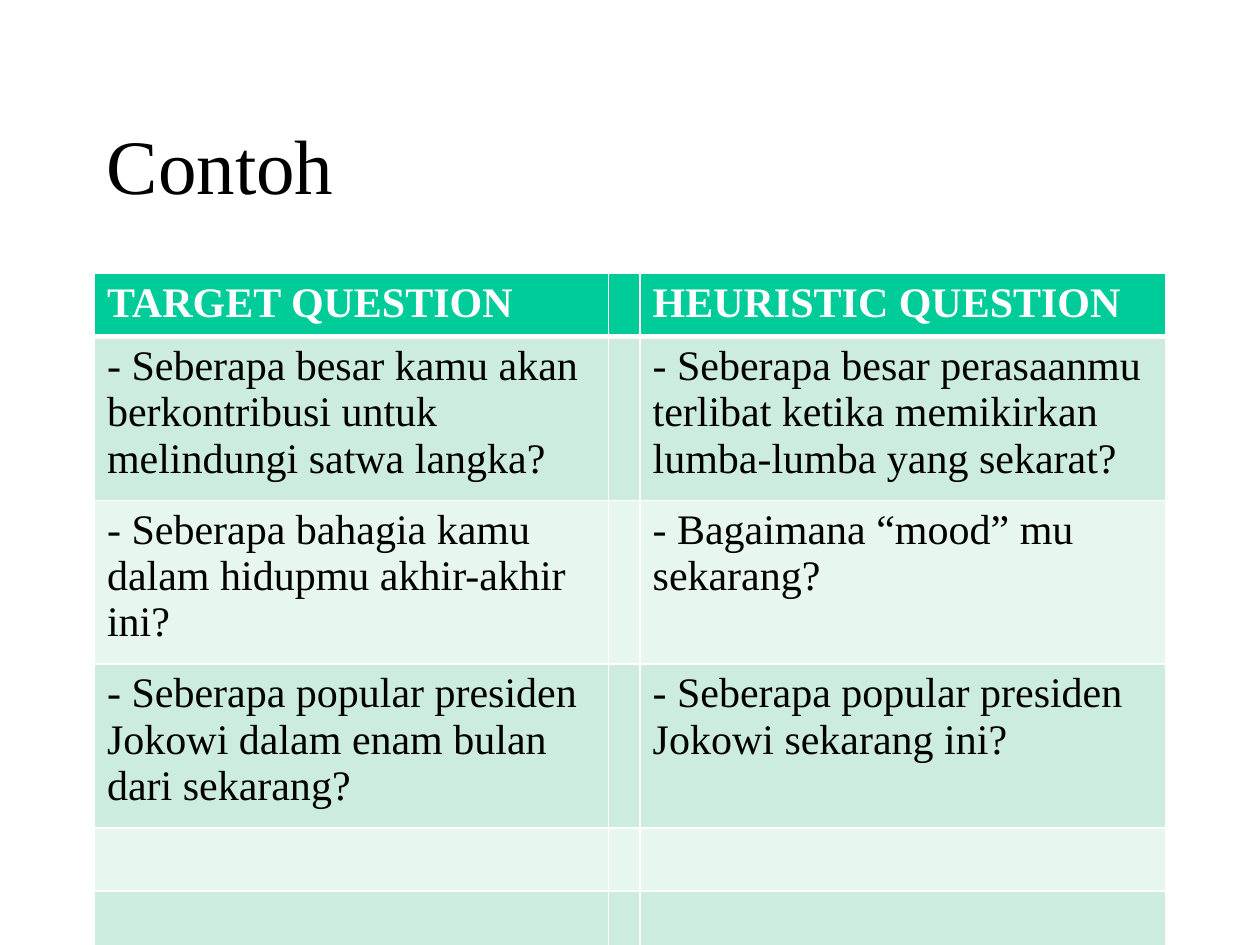
from dataclasses import dataclass

from lxml import etree
from pptx import Presentation
from pptx.dml.color import RGBColor
from pptx.enum.text import MSO_ANCHOR
from pptx.oxml.ns import qn
from pptx.util import Inches, Pt

MIDDLE = MSO_ANCHOR.MIDDLE


@dataclass(frozen=True)
class Theme:
    font: str = "Times New Roman"
    title_size: int = 44
    table_size: int = 24
    text: str = "000000"
    header_text: str = "FFFFFF"
    header_fill: str = "00CC99"
    bands: tuple = ("CCECDE", "E7F6EF")
    border: str = "FFFFFF"
    thin: int = 1
    thick: int = 3


THEME = Theme()

LEFT, WIDTH = 0.75, 8.5
COLUMN_WIDTHS = (4.08, 0.25, 4.17)
ROW_HEIGHT = 0.47
ROW_COUNT = 7
QUESTIONS = [
    ("TARGET QUESTION", "HEURISTIC QUESTION"),
    ("- Seberapa besar kamu akan berkontribusi untuk melindungi satwa langka?",
     "- Seberapa besar perasaanmu terlibat ketika memikirkan lumba-lumba yang sekarat?"),
    ("- Seberapa bahagia kamu dalam hidupmu akhir-akhir ini?",
     "- Bagaimana “mood” mu sekarang?"),
    ("- Seberapa popular presiden Jokowi dalam enam bulan dari sekarang?",
     "- Seberapa popular presiden Jokowi sekarang ini?"),
]


def style_paragraph(paragraph, size, color, bold=False):
    font = paragraph.font
    font.name = THEME.font
    font.size = Pt(size)
    font.bold = bold
    font.color.rgb = RGBColor.from_string(color)


def add_title(slide, text):
    shape = slide.shapes.add_textbox(Inches(LEFT), Inches(0.67), Inches(WIDTH), Inches(1.25))
    frame = shape.text_frame
    frame.word_wrap = True
    frame.vertical_anchor = MIDDLE
    frame.text = text
    style_paragraph(frame.paragraphs[0], THEME.title_size, THEME.text)


def set_borders(cell, top, bottom):
    properties = cell._tc.get_or_add_tcPr()
    widths = {"a:lnL": THEME.thin, "a:lnR": THEME.thin, "a:lnT": top, "a:lnB": bottom}
    for tag, width in widths.items():
        line = etree.SubElement(properties, qn(tag), w=str(Pt(width)))
        fill = etree.SubElement(line, qn("a:solidFill"))
        etree.SubElement(fill, qn("a:srgbClr"), val=THEME.border)


def style_cell(cell, row):
    is_header = row == 0
    # Borders come before the fill in the cell properties
    set_borders(cell,
                top=THEME.thick if row == 1 else THEME.thin,
                bottom=THEME.thick if is_header else THEME.thin)
    fill = THEME.header_fill if is_header else THEME.bands[(row - 1) % 2]
    cell.fill.solid()
    cell.fill.fore_color.rgb = RGBColor.from_string(fill)
    color = THEME.header_text if is_header else THEME.text
    style_paragraph(cell.text_frame.paragraphs[0], THEME.table_size, color, is_header)


def add_question_table(slide):
    table = slide.shapes.add_table(
        ROW_COUNT, len(COLUMN_WIDTHS), Inches(LEFT), Inches(2.17),
        Inches(WIDTH), Inches(ROW_HEIGHT * ROW_COUNT)).table
    for column, width in zip(table.columns, COLUMN_WIDTHS):
        column.width = Inches(width)
    for row in table.rows:
        row.height = Inches(ROW_HEIGHT)

    # The narrow middle column stays empty
    for row, (target, heuristic) in enumerate(QUESTIONS):
        table.cell(row, 0).text = target
        table.cell(row, 2).text = heuristic

    for row in range(ROW_COUNT):
        for column in range(len(COLUMN_WIDTHS)):
            style_cell(table.cell(row, column), row)


def main():
    presentation = Presentation()
    presentation.slide_width = Inches(10)
    presentation.slide_height = Inches(7.5)
    slide = presentation.slides.add_slide(presentation.slide_layouts[6])
    add_title(slide, "Contoh")
    add_question_table(slide)
    presentation.save("out.pptx")


if __name__ == "__main__":
    main()
